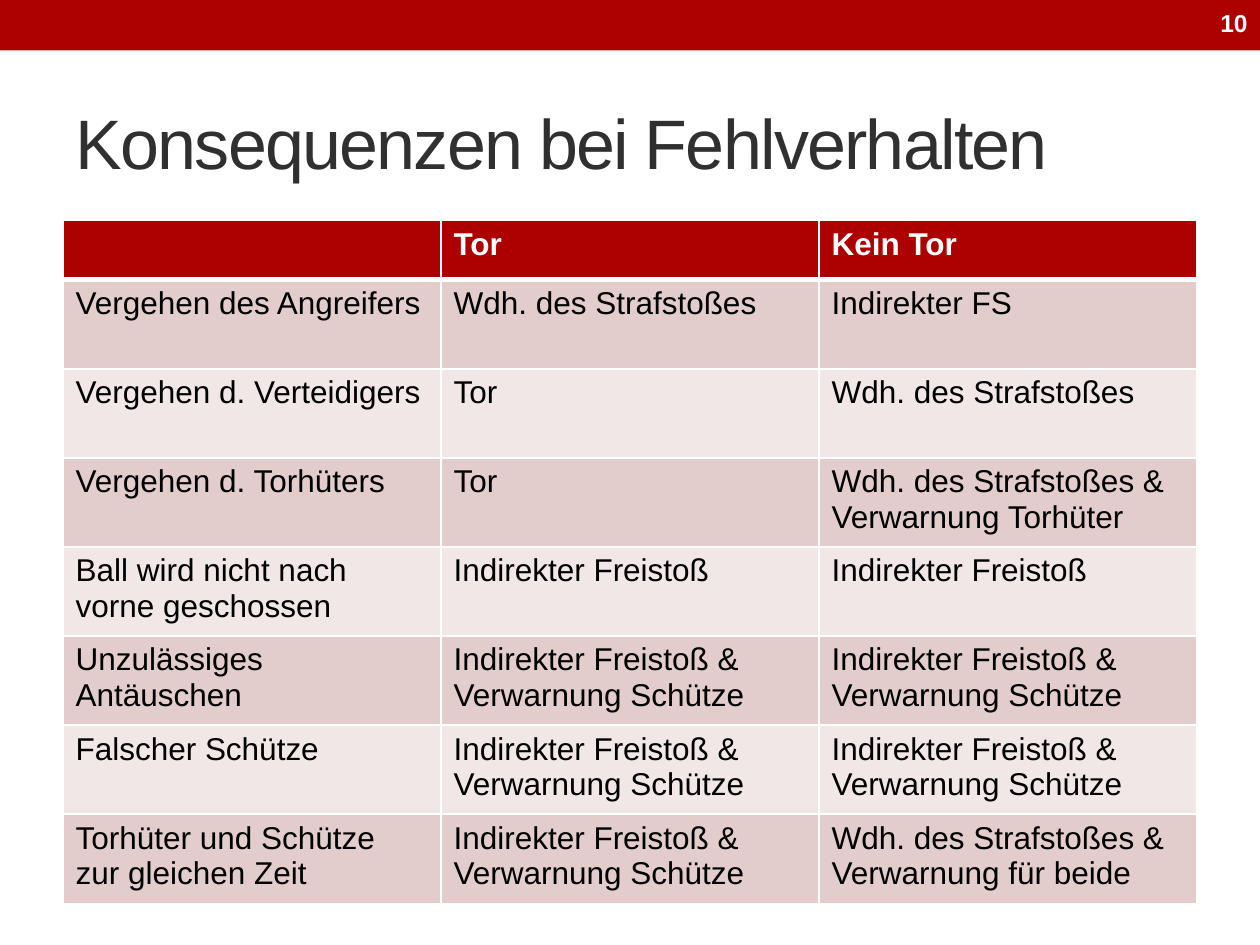
from dataclasses import dataclass

from lxml import etree
from pptx import Presentation
from pptx.dml.color import RGBColor
from pptx.enum.shapes import MSO_SHAPE
from pptx.enum.text import MSO_ANCHOR, PP_ALIGN
from pptx.oxml.ns import qn
from pptx.util import Inches, Pt

RECTANGLE = MSO_SHAPE.RECTANGLE
MIDDLE = MSO_ANCHOR.MIDDLE
LEFT, RIGHT = PP_ALIGN.LEFT, PP_ALIGN.RIGHT
TITLE_ONLY = 5


@dataclass(frozen=True)
class Theme:
    """Colours, font and sizes of the deck."""
    font: str = "Arial"
    accent: str = "AD0101"
    white: str = "FFFFFF"
    black: str = "000000"
    heading: str = "303030"
    bands: tuple = ("E3CCCC", "F1E7E7")
    title_size: int = 40
    body_size: int = 18
    number_size: int = 14
    thin: int = 1
    thick: int = 3


THEME = Theme()
REPEAT = "Wdh. des Strafstoßes"
FREE_KICK = "Indirekter Freistoß"
SHOOTER_WARNED = f"{FREE_KICK} &\nVerwarnung Schütze"
HEADINGS = ("", "Tor", "Kein Tor")
OFFENCES = (
    ("Vergehen des Angreifers", REPEAT, "Indirekter FS"),
    ("Vergehen d. Verteidigers", "Tor", REPEAT),
    ("Vergehen d. Torhüters", "Tor", f"{REPEAT} &\nVerwarnung Torhüter"),
    ("Ball wird nicht nach vorne geschossen", FREE_KICK, FREE_KICK),
    ("Unzulässiges Antäuschen", SHOOTER_WARNED, SHOOTER_WARNED),
    ("Falscher Schütze", SHOOTER_WARNED, SHOOTER_WARNED),
    ("Torhüter und Schütze\nzur gleichen Zeit", SHOOTER_WARNED,
     f"{REPEAT} &\nVerwarnung für beide"),
)


def write(frame, text, size, color, bold=False, align=LEFT):
    """Write each line of text as a paragraph and return the last run."""
    for index, line in enumerate(text.split("\n")):
        paragraph = frame.add_paragraph() if index else frame.paragraphs[0]
        paragraph.alignment = align
        run = paragraph.add_run()
        run.text = line
        run.font.name = THEME.font
        run.font.size = Pt(size)
        run.font.bold = bold
        run.font.color.rgb = RGBColor.from_string(color)
    return run


def add_banner(slide, left, top, width, height, number):
    """Draw the top band with the slide number at its right end."""
    band = slide.shapes.add_shape(RECTANGLE, left, top, width, height)
    band.shadow.inherit = False
    band.fill.solid()
    band.fill.fore_color.rgb = RGBColor.from_string(THEME.accent)
    band.line.fill.background()

    number_width = Inches(1.17)
    page = slide.shapes.add_textbox(
        left + width - number_width, top, number_width, Inches(0.36))
    page.text_frame.word_wrap = True
    page.text_frame.vertical_anchor = MIDDLE
    write(page.text_frame, number, THEME.number_size, THEME.white, True, RIGHT)


def place_title(slide, left, top, width, height, text):
    """Place and format the title placeholder."""
    title = slide.shapes.title
    title.left, title.top, title.width, title.height = left, top, width, height
    title.text_frame.word_wrap = True
    title.text_frame.vertical_anchor = MIDDLE
    run = write(title.text_frame, text, THEME.title_size, THEME.heading)
    run.font._element.set("spc", "-100")


def set_borders(cell, top, bottom):
    """Draw white borders with the given top and bottom widths."""
    properties = cell._tc.get_or_add_tcPr()
    widths = {"L": THEME.thin, "R": THEME.thin, "T": top, "B": bottom}
    for side, width in widths.items():
        line = etree.SubElement(properties, qn(f"a:ln{side}"), w=str(Pt(width)))
        fill = etree.SubElement(line, qn("a:solidFill"))
        etree.SubElement(fill, qn("a:srgbClr"), val=THEME.white)


def add_consequences(slide, left, top, width, height):
    """Fill the table of offences and their consequences."""
    rows = (HEADINGS,) + OFFENCES
    table = slide.shapes.add_table(
        len(rows), len(HEADINGS), left, top, width, height).table
    for column in table.columns:
        column.width = width // len(HEADINGS)
    heading_height = Inches(0.47)
    for index, texts in enumerate(rows):
        is_heading = index == 0
        table.rows[index].height = (
            heading_height if is_heading
            else (height - heading_height) // len(OFFENCES))
        fill = THEME.accent if is_heading else THEME.bands[(index - 1) % 2]
        color = THEME.white if is_heading else THEME.black
        upper = THEME.thick if index == 1 else THEME.thin
        lower = THEME.thick if is_heading else THEME.thin
        for cell, text in zip(table.rows[index].cells, texts):
            set_borders(cell, upper, lower)
            cell.fill.solid()
            cell.fill.fore_color.rgb = RGBColor.from_string(fill)
            if text:
                write(cell.text_frame, text, THEME.body_size, color, is_heading)


def main():
    """Build and save the slide."""
    deck = Presentation()
    deck.slide_width, deck.slide_height = Inches(10), Inches(7.5)
    slide = deck.slides.add_slide(deck.slide_layouts[TITLE_ONLY])
    margin, content_width = Inches(0.5), Inches(9)
    add_banner(slide, 0, 0, deck.slide_width, Inches(0.4), "10")
    place_title(slide, margin, Inches(0.58), content_width, Inches(1.08),
                "Konsequenzen bei Fehlverhalten")
    add_consequences(slide, margin, Inches(1.75), content_width, Inches(5.42))
    deck.save("out.pptx")


if __name__ == "__main__":
    main()
